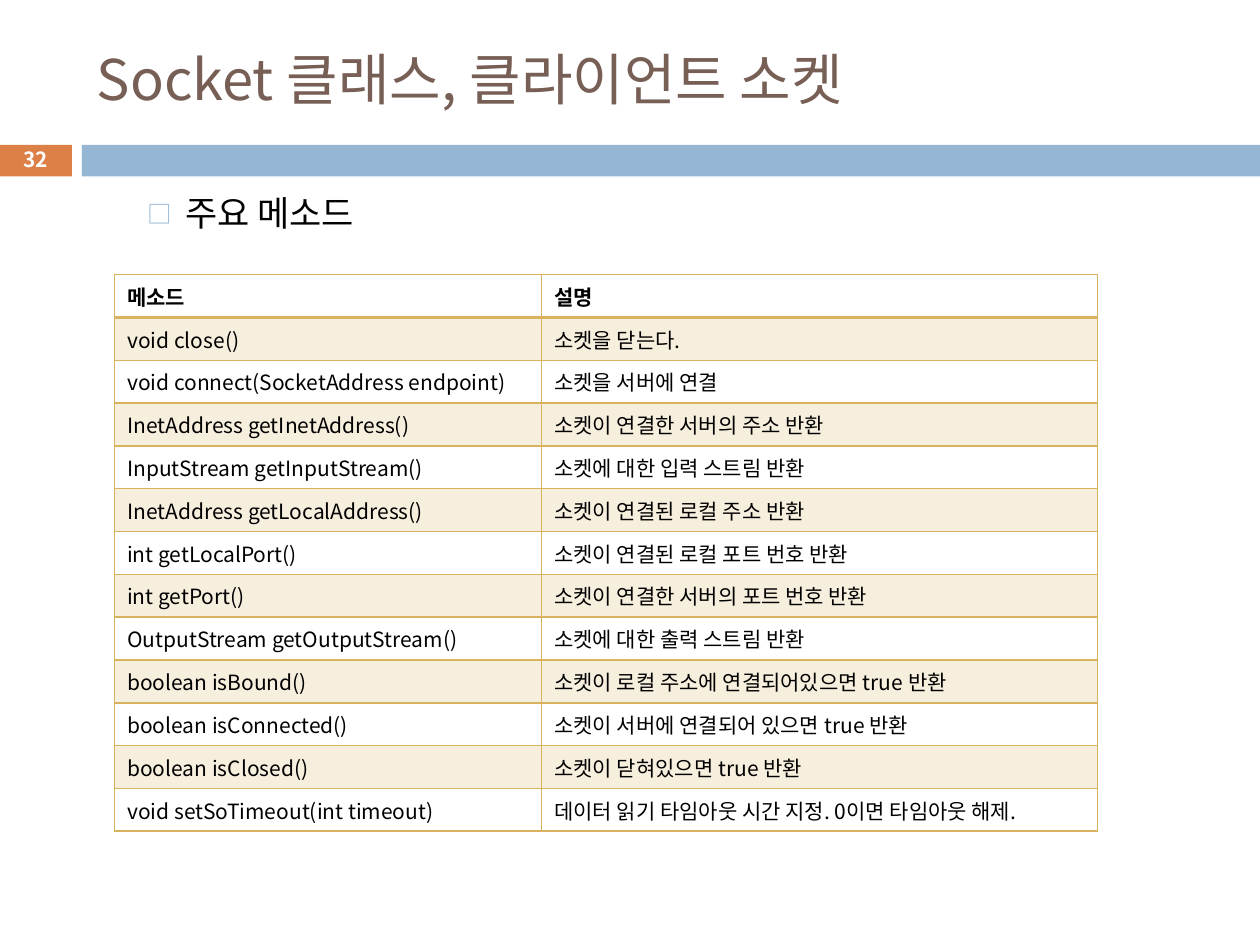
from dataclasses import dataclass

from lxml import etree
from pptx import Presentation
from pptx import util as u
from pptx.dml.color import RGBColor
from pptx.enum import shapes, text
from pptx.oxml import ns

FONT = "Noto Sans CJK KR"
ORANGE = RGBColor(0xDD, 0x80, 0x47)
BLUE = RGBColor(0x94, 0xB6, 0xD2)
BROWN = RGBColor(0x77, 0x5F, 0x55)
GOLD = RGBColor(0xD8, 0xB2, 0x5C)
BLACK = RGBColor(0, 0, 0)
WHITE = RGBColor(255, 255, 255)

WIDTH, HEIGHT = u.Inches(10), u.Inches(7.5)
COLUMNS, ROWS = 1000, 750
METHOD_COLUMNS, DESCRIPTION_COLUMNS, TABLE_ROW = 339, 441, 34

METHODS = [
    ("메소드", "설명"),
    ("void close()", "소켓을 닫는다."),
    ("void connect(SocketAddress endpoint)", "소켓을 서버에 연결"),
    ("InetAddress getInetAddress()", "소켓이 연결한 서버의 주소 반환"),
    ("InputStream getInputStream()", "소켓에 대한 입력 스트림 반환"),
    ("InetAddress getLocalAddress()", "소켓이 연결된 로컬 주소 반환"),
    ("int getLocalPort()", "소켓이 연결된 로컬 포트 번호 반환"),
    ("int getPort()", "소켓이 연결한 서버의 포트 번호 반환"),
    ("OutputStream getOutputStream()", "소켓에 대한 출력 스트림 반환"),
    ("boolean isBound()", "소켓이 로컬 주소에 연결되어있으면 true 반환"),
    ("boolean isConnected()", "소켓이 서버에 연결되어 있으면 true 반환"),
    ("boolean isClosed()", "소켓이 닫혀있으면 true 반환"),
    ("void setSoTimeout(int timeout)", "데이터 읽기 타임아웃 시간 지정. 0이면 타임아웃 해제."),
]


@dataclass(frozen=True)
class Area:
    """A rectangle in grid columns and rows."""

    column: int
    row: int
    columns: int
    rows: int

    def box(self) -> tuple:
        """Return left, top, width and height as lengths."""
        return across(self.column), down(self.row), across(self.columns), down(self.rows)


@dataclass(frozen=True)
class Style:
    """The look of a piece of text."""

    size: float
    color: RGBColor
    bold: bool = False


@dataclass(frozen=True)
class Band:
    """A coloured bar under the title."""

    area: Area
    color: RGBColor


@dataclass(frozen=True)
class Label:
    """A text box with its style and alignment."""

    area: Area
    words: str
    style: Style
    anchor: text.MSO_ANCHOR = text.MSO_ANCHOR.MIDDLE
    align: text.PP_ALIGN = text.PP_ALIGN.LEFT


BANDS = [
    Band(Area(-1, 115, 58, 25), ORANGE),
    Band(Area(65, 115, 935, 25), BLUE),
]
TITLE = Label(Area(67, 25, 892, 74), "Socket 클래스, 클라이언트 소켓", Style(32, BROWN))
TOPIC = Label(Area(67, 147, 892, 578), "주요 메소드", Style(20, BLACK), text.MSO_ANCHOR.TOP)
NUMBER = Label(Area(-1, 113, 58, 27), "32", Style(11.9, WHITE, True), align=text.PP_ALIGN.CENTER)
TABLE = Area(91, 218, METHOD_COLUMNS + DESCRIPTION_COLUMNS, TABLE_ROW * len(METHODS))


def across(columns: int) -> int:
    """Convert grid columns to a length."""
    return int(WIDTH * columns / COLUMNS)


def down(rows: int) -> int:
    """Convert grid rows to a length."""
    return int(HEIGHT * rows / ROWS)


def add_element(parent, tag: str, **attributes: str):
    """Append a DrawingML element."""
    return etree.SubElement(parent, ns.qn(tag), attributes)


def write(frame, words: str, style: Style):
    """Fill a text frame and return its paragraph."""
    frame.text = words
    paragraph = frame.paragraphs[0]
    font = paragraph.runs[0].font
    font.size, font.bold, font.name = u.Pt(style.size), style.bold, FONT
    font.color.rgb = style.color
    add_element(paragraph.runs[0]._r.get_or_add_rPr(), "a:ea", typeface=FONT)
    return paragraph


def draw_band(slide, band: Band) -> None:
    """Draw a borderless bar."""
    shape = slide.shapes.add_shape(shapes.MSO_SHAPE.RECTANGLE, *band.area.box())
    shape.shadow.inherit = False
    shape.fill.solid()
    shape.fill.fore_color.rgb = band.color
    shape.line.fill.background()


def draw_label(slide, label: Label):
    """Draw a text box and return its paragraph."""
    frame = slide.shapes.add_textbox(*label.area.box()).text_frame
    frame.word_wrap = True
    frame.vertical_anchor = label.anchor
    paragraph = write(frame, label.words, label.style)
    paragraph.alignment = label.align
    return paragraph


def add_bullet(paragraph) -> None:
    """Give a paragraph a hanging square bullet."""
    paragraph.space_before = u.Pt(5.5)
    properties = paragraph._p.get_or_add_pPr()
    properties.set("marL", str(across(70)))
    properties.set("indent", str(across(-30)))
    add_element(add_element(properties, "a:buClr"), "a:srgbClr", val=str(BLUE))
    add_element(properties, "a:buSzPct", val="70000")
    add_element(properties, "a:buFont", typeface=FONT)
    add_element(properties, "a:buChar", char="□")


def draw_borders(cell, row: int) -> None:
    """Rule a cell, with a heavier line under the heading."""
    widths = {"L": 1, "R": 1, "T": 2 if row == 1 else 1, "B": 2 if row == 0 else 1}
    for side, width in widths.items():
        line = add_element(cell._tc.get_or_add_tcPr(), f"a:ln{side}", w=str(u.Pt(width)))
        add_element(add_element(line, "a:solidFill"), "a:srgbClr", val=str(GOLD))


def fill_cell(cell, banded: bool) -> None:
    """Tint a banded cell and leave others clear."""
    if not banded:
        cell.fill.background()
        return
    cell.fill.solid()
    cell.fill.fore_color.rgb = GOLD
    color = cell._tc.tcPr.find(ns.qn("a:solidFill")).find(ns.qn("a:srgbClr"))
    add_element(color, "a:alpha", val="20000")


def draw_table(slide, area: Area, records: list) -> None:
    """Draw the table of methods."""
    table = slide.shapes.add_table(len(records), 2, *area.box()).table
    table.first_row = table.horz_banding = False
    for column, columns in zip(table.columns, (METHOD_COLUMNS, DESCRIPTION_COLUMNS)):
        column.width = across(columns)
    for row, record in enumerate(records):
        table.rows[row].height = down(TABLE_ROW)
        for column, words in enumerate(record):
            cell = table.cell(row, column)
            write(cell.text_frame, words, Style(12, BLACK, row == 0))
            draw_borders(cell, row)
            fill_cell(cell, row % 2 == 1)


def main() -> None:
    """Build and save the slide."""
    presentation = Presentation()
    presentation.slide_width, presentation.slide_height = WIDTH, HEIGHT
    slide = presentation.slides.add_slide(presentation.slide_layouts[6])
    for band in BANDS:
        draw_band(slide, band)
    draw_label(slide, TITLE)
    add_bullet(draw_label(slide, TOPIC))
    draw_table(slide, TABLE, METHODS)
    draw_label(slide, NUMBER)
    presentation.save("out.pptx")


if __name__ == "__main__":
    main()
